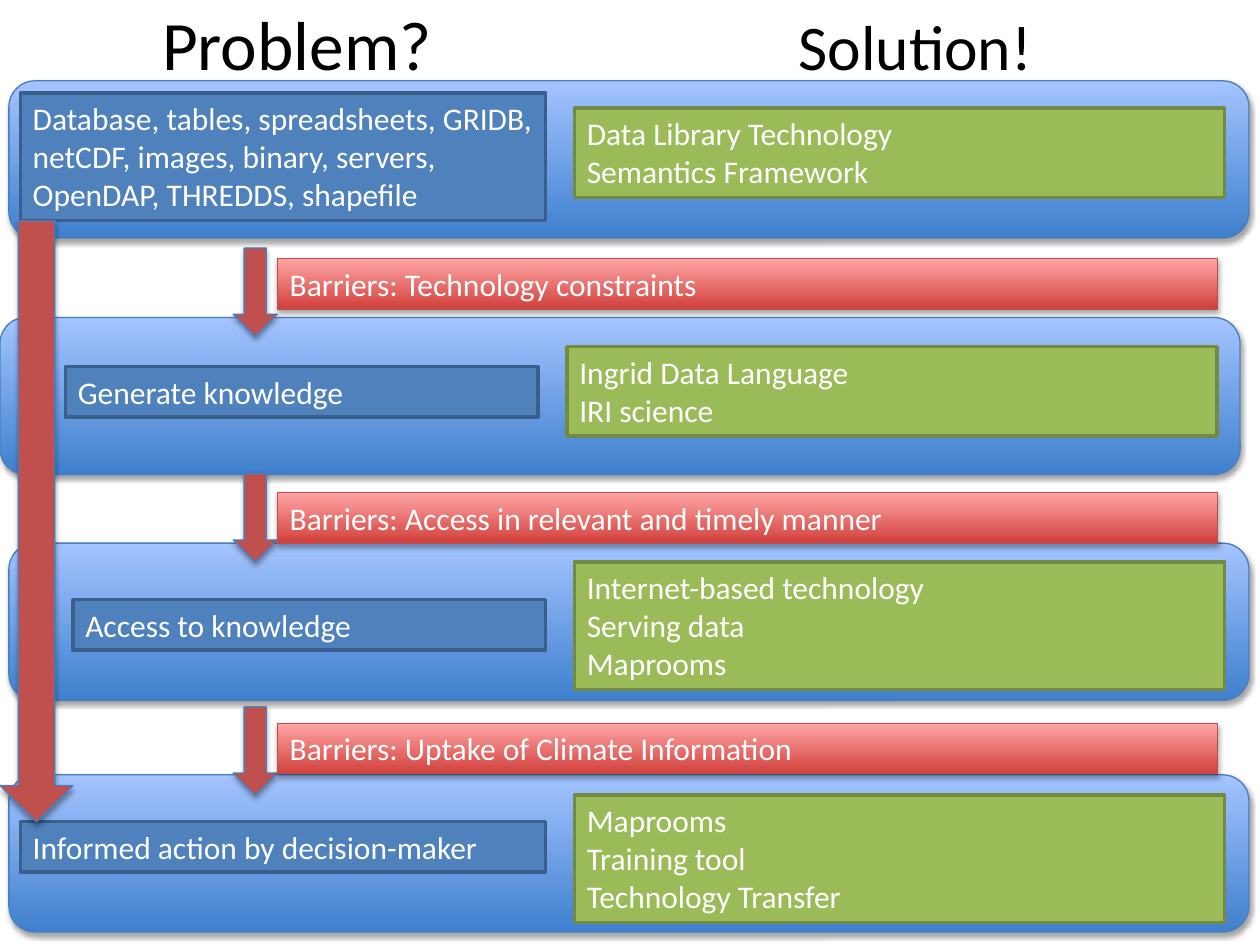
from dataclasses import dataclass

from lxml.etree import SubElement
from pptx import Presentation
from pptx.dml.color import RGBColor
from pptx.enum.shapes import MSO_SHAPE as Preset
from pptx.enum.text import MSO_ANCHOR as Anchor, MSO_AUTO_SIZE as AutoSize, PP_ALIGN as Align
from pptx.oxml.ns import qn
from pptx.util import Cm, Pt

FONT = "Calibri"
COLORS = {
    "text": "000000", "light_text": "FFFFFF", "shadow": "000000",
    "band_dark": "3F80CE", "band_light": "A4C4FF", "band_line": "4B7EBC",
    "problem": "4F81BD", "problem_line": "3A5F8C",
    "solution": "9BBB59", "solution_line": "738A42",
    "barrier_dark": "D1403C", "barrier_light": "FFA6A5", "barrier_line": "BF4C48",
    "arrow": "C0504D",
}


@dataclass(frozen=True)
class Style:
    """Fill colours (one is solid, two a gradient from the bottom up) and outline."""
    fill: tuple[str, ...]
    line: str
    line_width: float = 0.75
    shadow: bool = True


BAND = Style(("band_dark", "band_light"), "band_line")
BARRIER = Style(("barrier_dark", "barrier_light"), "barrier_line")
ARROW = Style(("arrow",), "band_line")
PROBLEM = Style(("problem",), "problem_line", 2, False)
SOLUTION = Style(("solution",), "solution_line", 2, False)


@dataclass(frozen=True)
class Box:
    """Position and size in centimetres, with the text inside."""
    left: float
    top: float
    width: float
    height: float
    text: str = ""

    def lengths(self) -> list[Cm]:
        return [Cm(value) for value in (self.left, self.top, self.width, self.height)]


ONE_LINE, TWO_LINES, THREE_LINES = 1.02, 1.8, 2.57

BANDS = [Box(left, top, 25, 3.17)
         for left, top in ((0.18, 1.63), (0, 6.4), (0.18, 10.95), (0.18, 15.62))]
PROBLEMS = [
    Box(0.41, 1.88, 10.59, THREE_LINES,
        "Database, tables, spreadsheets, GRIDB, netCDF, images, binary, servers, "
        "OpenDAP, THREDDS, shapefile"),
    Box(1.32, 7.39, 9.53, ONE_LINE, "Generate knowledge"),
    Box(1.47, 12.09, 9.53, ONE_LINE, "Access to knowledge"),
    Box(0.41, 16.56, 10.59, ONE_LINE, "Informed action by decision-maker"),
]
ARROWS = [Box(0, 4.45, 1.47, 12.12)]
ARROWS += [Box(4.7, top, 0.89, 1.78) for top in (5, 9.55, 14.25)]
SOLUTIONS = [
    Box(11.58, 2.18, 13.11, TWO_LINES, "Data Library Technology\nSemantics Framework"),
    Box(11.43, 6.99, 13.11, TWO_LINES, "Ingrid Data Language\nIRI science"),
    Box(11.58, 11.33, 13.11, THREE_LINES,
        "Internet-based technology\nServing data\nMaprooms"),
    Box(11.58, 16.03, 13.11, THREE_LINES,
        "Maprooms\nTraining tool\nTechnology Transfer"),
]
BARRIERS = [
    Box(5.59, top, 18.95, ONE_LINE, f"Barriers: {barrier}")
    for top, barrier in (
        (5.21, "Technology constraints"),
        (9.93, "Access in relevant and timely manner"),
        (14.58, "Uptake of Climate Information"),
    )
]
HEADINGS = [
    (Box(2.9, 0.08, 6.17, 1.55, "Problem?"), 39.6),
    (Box(15.37, 0.13, 6.17, 1.55, "Solution!"), 36.3),
]
LAYERS = [
    (BANDS, Preset.ROUNDED_RECTANGLE, BAND),
    (PROBLEMS, Preset.RECTANGLE, PROBLEM),
    (ARROWS, Preset.DOWN_ARROW, ARROW),
    (SOLUTIONS, Preset.RECTANGLE, SOLUTION),
    (BARRIERS, Preset.RECTANGLE, BARRIER),
]


def rgb(name: str) -> RGBColor:
    return RGBColor.from_string(COLORS[name])


def write_text(shape, text: str, size: float, color: str, align: Align, anchor: Anchor) -> None:
    frame = shape.text_frame
    frame.word_wrap = True
    frame.vertical_anchor = anchor
    frame.text = text
    for para in frame.paragraphs:
        para.alignment = align
        for span in para.runs:
            span.font.name = FONT
            span.font.size = Pt(size)
            span.font.color.rgb = rgb(color)


def add_shadow(shape) -> None:
    """Put a soft shadow straight below the shape."""
    effects = shape._element.spPr.find(qn("a:effectLst"))
    shadow = SubElement(effects, qn("a:outerShdw"), blurRad=str(Pt(3.1)),
                        dist=str(Pt(1.8)), dir="5400000", rotWithShape="0")
    color = SubElement(shadow, qn("a:srgbClr"), val=COLORS["shadow"])
    SubElement(color, qn("a:alpha"), val="35000")


def draw_shape(page, box: Box, preset: Preset, style: Style) -> None:
    shape = page.shapes.add_shape(preset, *box.lengths())
    if len(style.fill) == 1:
        shape.fill.solid()
        shape.fill.fore_color.rgb = rgb(style.fill[0])
    else:
        shape.fill.gradient()
        shape.fill.gradient_angle = 90
        for stop, name in zip(shape.fill.gradient_stops, style.fill):
            stop.color.rgb = rgb(name)
    shape.line.color.rgb = rgb(style.line)
    shape.line.width = Pt(style.line_width)
    shape.shadow.inherit = False
    if style.shadow:
        add_shadow(shape)
    if box.text:
        write_text(shape, box.text, 18, "light_text", Align.LEFT, Anchor.TOP)
        shape.text_frame.auto_size = AutoSize.SHAPE_TO_FIT_TEXT


def draw_heading(page, box: Box, size: float) -> None:
    heading = page.shapes.add_textbox(*box.lengths())
    write_text(heading, box.text, size, "text", Align.CENTER, Anchor.MIDDLE)


def main() -> None:
    deck = Presentation()
    deck.slide_width, deck.slide_height = Cm(25.4), Cm(19.05)
    page = deck.slides.add_slide(deck.slide_layouts[6])
    for boxes, preset, style in LAYERS:
        for box in boxes:
            draw_shape(page, box, preset, style)
    for box, size in HEADINGS:
        draw_heading(page, box, size)
    deck.save("out.pptx")


if __name__ == "__main__":
    main()
